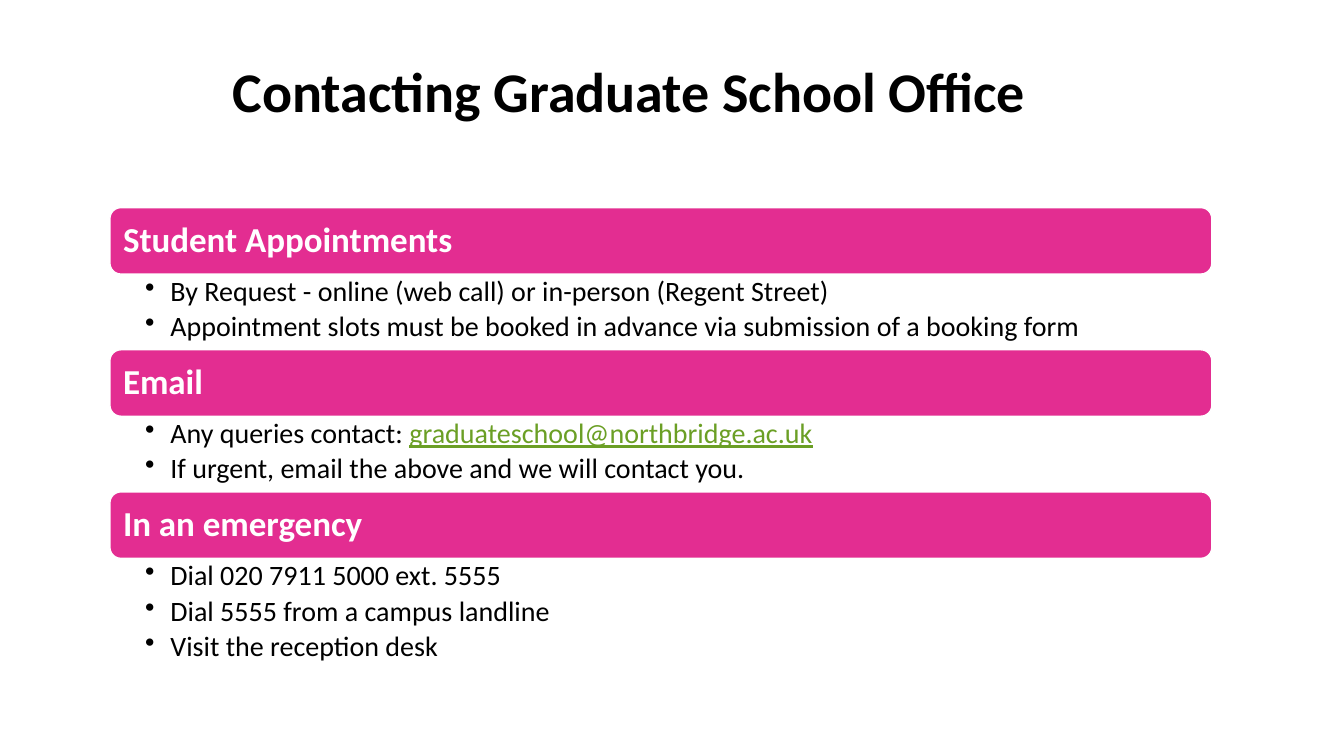
from dataclasses import dataclass

from lxml.etree import SubElement
from pptx import Presentation
from pptx.dml.color import RGBColor
from pptx.enum.shapes import MSO_SHAPE as Shape
from pptx.enum.text import MSO_ANCHOR as Anchor, PP_ALIGN as Align
from pptx.oxml.ns import qn
from pptx.util import Inches, Pt


@dataclass(frozen=True)
class Theme:
    font: str = "Calibri"
    black: RGBColor = RGBColor(0x00, 0x00, 0x00)
    white: RGBColor = RGBColor(0xFF, 0xFF, 0xFF)
    pink: RGBColor = RGBColor(0xE3, 0x2D, 0x91)
    green: RGBColor = RGBColor(0x6B, 0x9F, 0x25)
    title_size: Pt = Pt(40)
    heading_size: Pt = Pt(25)
    body_size: Pt = Pt(20)


theme = Theme()


def style_paragraph(paragraph, size, color, bold=False):
    paragraph.alignment = Align.LEFT
    paragraph.line_spacing = 0.9
    paragraph.font.name = theme.font
    paragraph.font.size = size
    paragraph.font.bold = bold
    paragraph.font.color.rgb = color


def set_margins(frame, left, top, right, bottom):
    frame.word_wrap = True
    frame.margin_left = Inches(left)
    frame.margin_top = Inches(top)
    frame.margin_right = Inches(right)
    frame.margin_bottom = Inches(bottom)


email = "graduateschool@northbridge.ac.uk"
sections = [
    ("Student Appointments", [
        ["By Request - online (web call) or in-person (Regent Street)"],
        ["Appointment slots must be booked in advance via submission of a booking form"],
    ]),
    ("Email", [
        ["Any queries contact: ", email],
        ["If urgent, email the above and we will contact you."],
    ]),
    ("In an emergency", [
        ["Dial 020 7911 5000 ext. 5555"],
        ["Dial 5555 from a campus landline"],
        ["Visit the reception desk"],
    ]),
]

presentation = Presentation()
presentation.slide_width = Inches(13.33)
presentation.slide_height = Inches(7.5)
slide = presentation.slides.add_slide(presentation.slide_layouts[6])

title = slide.shapes.add_textbox(Inches(2.21), Inches(0.59), Inches(9.83), Inches(1.22))
set_margins(title.text_frame, 0.1, 0.05, 0.1, 0.05)
title.text_frame.text = "Contacting Graduate School Office"
style_paragraph(title.text_frame.paragraphs[0], theme.title_size, theme.black, bold=True)

left, width = Inches(1.09), Inches(10.93)
bar_height = Inches(0.66)
line_height = Inches(0.375)
top = Inches(2.06)

for heading, bullets in sections:
    bar = slide.shapes.add_shape(Shape.ROUNDED_RECTANGLE, left, top, width, bar_height)
    bar.shadow.inherit = False
    bar.fill.solid()
    bar.fill.fore_color.rgb = theme.pink
    bar.line.color.rgb = theme.white
    bar.line.width = Pt(1)
    set_margins(bar.text_frame, 0.1, 0.1, 0.1, 0.1)
    bar.text_frame.vertical_anchor = Anchor.MIDDLE
    bar.text_frame.text = heading
    style_paragraph(bar.text_frame.paragraphs[0], theme.heading_size, theme.white, bold=True)
    top += bar_height

    body_height = line_height * len(bullets)
    body = slide.shapes.add_textbox(left, top, width, body_height)
    frame = body.text_frame
    set_margins(frame, 0.35, 0.03, 0.19, 0.03)
    for index, texts in enumerate(bullets):
        paragraph = frame.add_paragraph() if index else frame.paragraphs[0]
        style_paragraph(paragraph, theme.body_size, theme.black)
        paragraph.space_after = Pt(3.75)
        properties = paragraph._p.get_or_add_pPr()
        properties.set("marL", str(Inches(0.25)))
        properties.set("indent", str(Inches(-0.25)))
        bullet = SubElement(properties, qn("a:buChar"), char="•")
        properties.find(qn("a:defRPr")).addprevious(bullet)
        for text in texts:
            run = paragraph.add_run()
            run.text = text
            if text == email:
                run.font.color.rgb = theme.green
                run.font.underline = True
    top += body_height

presentation.save("out.pptx")
